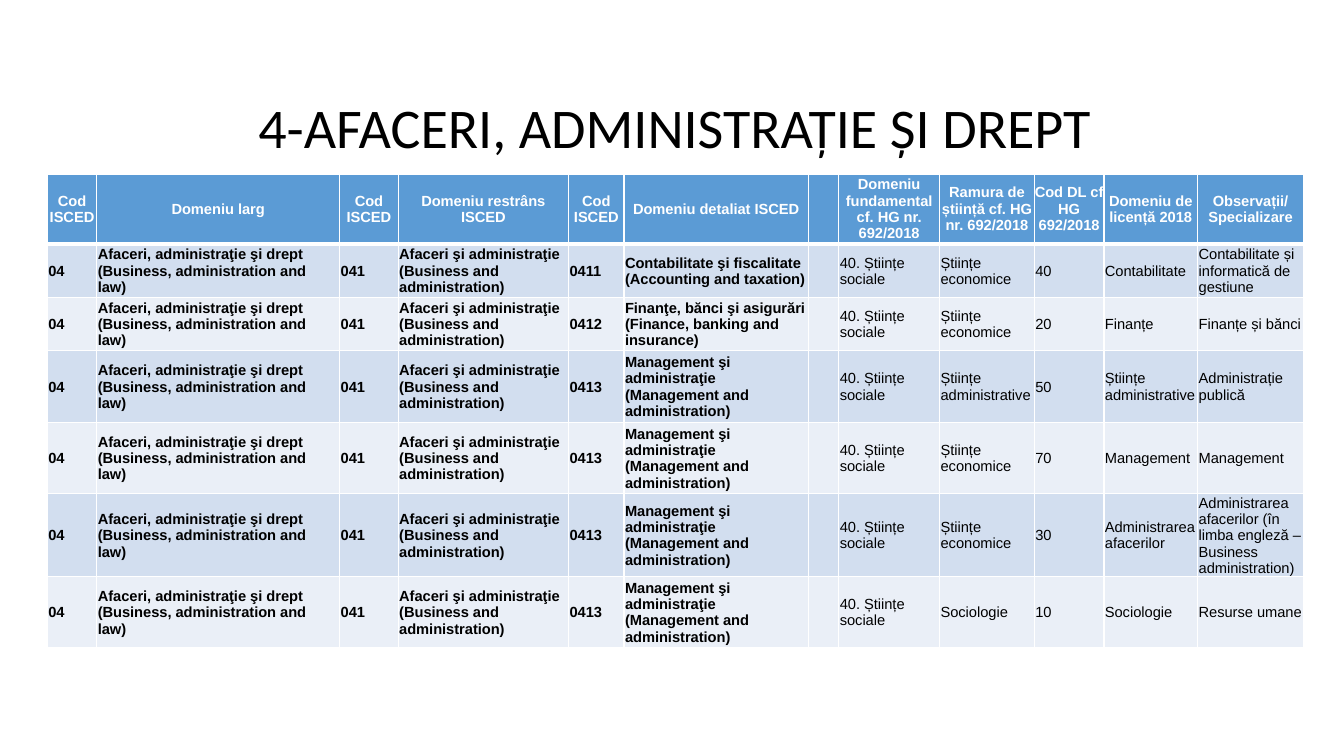
from pptx import Presentation
from pptx.dml.color import RGBColor
from pptx.enum.text import MSO_ANCHOR, PP_ALIGN
from pptx.oxml import parse_xml
from pptx.oxml.ns import nsdecls
from pptx.util import Inches, Pt

WIDTHS = [0.49, 2.41, 0.58, 1.69, 0.55, 1.83, 0.3, 1, 0.94, 0.69, 0.93, 1.05]
HEIGHTS = [0.69, 0.53, 0.53, 0.71, 0.71, 0.71, 0.71]
HEAD = [
    "Cod ISCED", "Domeniu larg", "Cod ISCED", "Domeniu restrâns ISCED",
    "Cod ISCED", "Domeniu detaliat ISCED", "",
    "Domeniu fundamental cf. HG nr. 692/2018",
    "Ramura de știință cf. HG nr. 692/2018", "Cod DL cf HG 692/2018",
    "Domeniu de licență 2018", "Observații/ Specializare",
]
BROAD = ["04", "Afaceri, administraţie şi drept (Business, administration and law)",
         "041", "Afaceri şi administraţie (Business and administration)"]
ACCOUNT = ["0411", "Contabilitate şi fiscalitate (Accounting and taxation)"]
FINANCE = ["0412", "Finanţe, bănci şi asigurări (Finance, banking and insurance)"]
MANAGE = ["0413", "Management şi administraţie (Management and administration)"]
SOCIAL = ["", "40. Științe sociale"]
ECON = "Științe economice"
ADMIN = "Științe administrative"
FIELDS = [
    (ACCOUNT, [ECON, "40", "Contabilitate", "Contabilitate și informatică de gestiune"]),
    (FINANCE, [ECON, "20", "Finanțe", "Finanțe și bănci"]),
    (MANAGE, [ADMIN, "50", ADMIN, "Administrație publică"]),
    (MANAGE, [ECON, "70", "Management", "Management"]),
    (MANAGE, [ECON, "30", "Administrarea afacerilor",
              "Administrarea afacerilor (în limba engleză – Business administration)"]),
    (MANAGE, ["Sociologie", "10", "Sociologie", "Resurse umane"]),
]


def color(code):
    """Turn a hex string into a colour."""
    return RGBColor.from_string(code)


def style(para, font, size, code, bold=False):
    """Format every run of a paragraph."""
    for run in para.runs:
        run.font.name = font
        run.font.size = Pt(size)
        run.font.bold = bold
        run.font.color.rgb = color(code)


def edge(cell, sides):
    """Draw white borders, given as side and width in points."""
    props = cell._tc.get_or_add_tcPr()
    for side, width in sides.items():
        props.append(parse_xml(
            f'<a:ln{side} {nsdecls("a")} w="{Pt(width)}"><a:solidFill>'
            f'<a:srgbClr val="FFFFFF"/></a:solidFill></a:ln{side}>'))


def fill_cell(cell, text, row, col):
    """Write one cell and format it by its row and column."""
    head = row == 0
    pad = Inches(0 if head else 0.01)
    cell.margin_left = cell.margin_right = cell.margin_top = pad
    cell.margin_bottom = 0
    cell.vertical_anchor = MSO_ANCHOR.MIDDLE
    edge(cell, {"L": 1, "R": 1, "T": 3 if row == 1 else 1, "B": 3 if head else 1})
    cell.fill.solid()
    cell.fill.fore_color.rgb = color(
        "5B9BD5" if head else "D2DEEF" if row % 2 else "EAEFF7")
    cell.text_frame.text = text
    para = cell.text_frame.paragraphs[0]
    para.alignment = PP_ALIGN.CENTER if head else PP_ALIGN.LEFT
    style(para, "Arial", 10.5, "FFFFFF" if head else "000000", head or col < 6)


def add_title(slide, left, top, width, height):
    """Place the slide title in its box."""
    title = slide.shapes.title
    title.left, title.top = Inches(left), Inches(top)
    title.width, title.height = Inches(width), Inches(height)
    frame = title.text_frame
    frame.text = "4-AFACERI, ADMINISTRAȚIE ȘI DREPT"
    frame.vertical_anchor = MSO_ANCHOR.MIDDLE
    para = frame.paragraphs[0]
    para.alignment = PP_ALIGN.CENTER
    para.line_spacing = 0.9
    style(para, "Calibri", 40, "000000")


def add_grid(slide, left, top):
    """Place the table of study fields with its corner at left, top."""
    rows = [HEAD] + [BROAD + narrow + SOCIAL + rest for narrow, rest in FIELDS]
    table = slide.shapes.add_table(
        len(rows), len(HEAD), Inches(left), Inches(top),
        Inches(sum(WIDTHS)), Inches(sum(HEIGHTS))).table
    for column, width in zip(table.columns, WIDTHS):
        column.width = Inches(width)
    for line, height in zip(table.rows, HEIGHTS):
        line.height = Inches(height)
    for row, texts in enumerate(rows):
        for col, text in enumerate(texts):
            fill_cell(table.cell(row, col), text, row, col)


def main():
    """Build and save the slide."""
    deck = Presentation()
    deck.slide_width, deck.slide_height = Inches(13.33), Inches(7.5)
    slide = deck.slides.add_slide(deck.slide_layouts[5])
    add_title(slide, 0.94, 0.93, 11.5, 0.72)
    add_grid(slide, 0.47, 1.73)
    deck.save("out.pptx")


if __name__ == "__main__":
    main()
